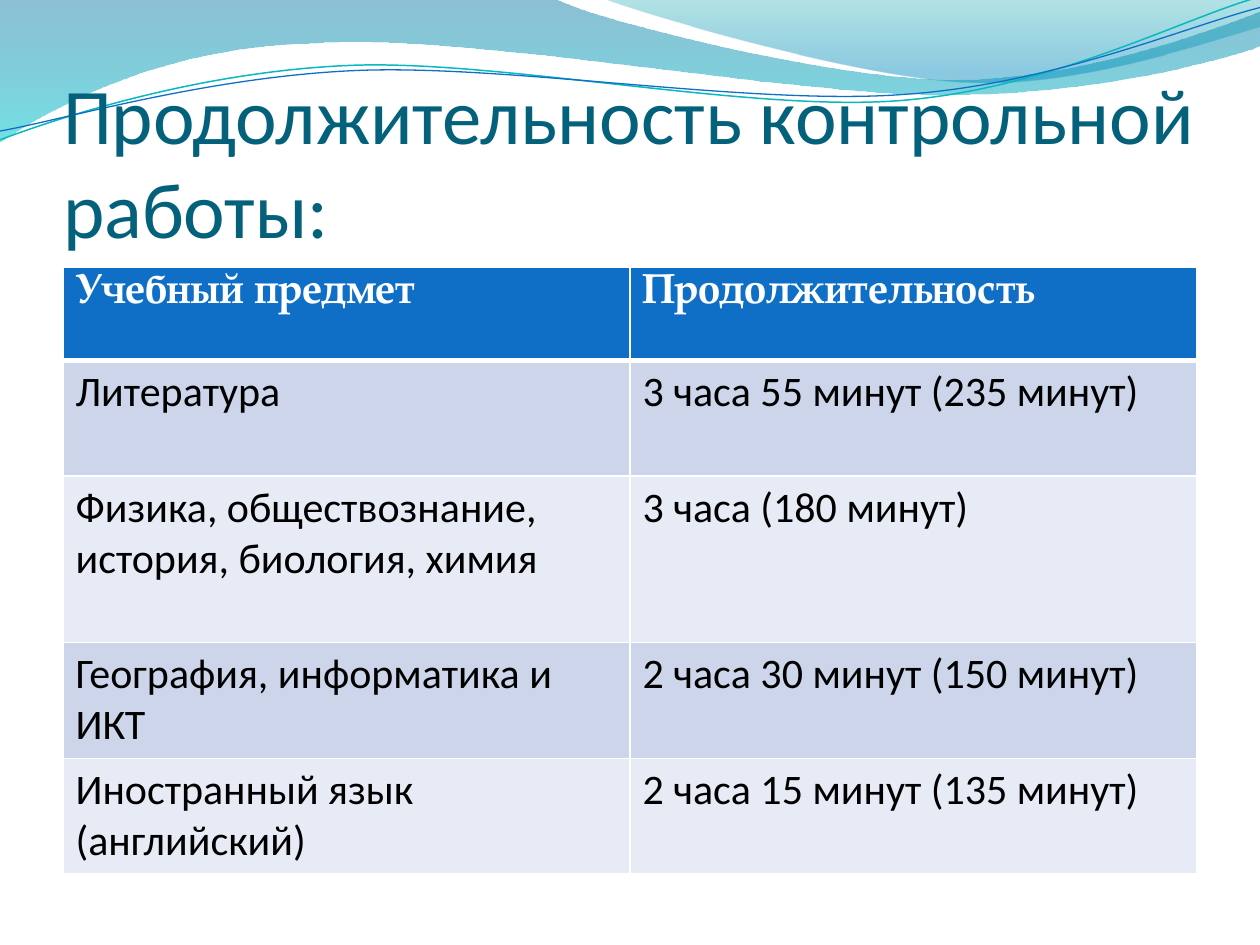
from lxml.etree import SubElement
from pptx import Presentation
from pptx.dml.color import RGBColor
from pptx.enum.text import MSO_ANCHOR, MSO_AUTO_SIZE, PP_ALIGN
from pptx.oxml.ns import qn
from pptx.util import Inches, Pt

COLORS = {
    "title": "04617B", "header": "0F6FC6", "band": "CCD5EA", "light": "E7EBF5",
    "white": "FFFFFF", "black": "000000", "teal": "0AB8BF",
    "deep": "0074A1", "aqua": "00C6CF", "sea": "00A1A9", "sky": "008BBF",
}
TITLE = "Продолжительность контрольной работы:"
ROWS = [
    ("Учебный предмет", "Продолжительность"),
    ("Литература", "3 часа 55 минут (235 минут)"),
    ("Физика, обществознание, история, биология, химия", "3 часа (180 минут)"),
    ("География, информатика и ИКТ", "2 часа 30 минут (150 минут)"),
    ("Иностранный язык (английский)", "2 часа 15 минут (135 минут)"),
]
ROW_HEIGHTS = [0.74, 0.92, 1.32, 0.92, 0.91]

# Each outline: a start point, then segments of one point (line) or three (curve).
WAVES = [
    {"start": (0, 0), "stops": [(0, "deep", 45), (1, "aqua", 55)], "segments": [
        [(4.4, -0.01)],
        [(4.76, 0.17), (6.64, 0.63), (7.58, 0.63)],
        [(8.53, 0.63), (9.58, 0.26), (10, 0.09)],
        [(10.01, 0.36)],
        [(9.83, 0.44), (8.7, 0.76), (7.46, 0.75)],
        [(6.22, 0.75), (3.82, 0.28), (2.57, 0.34)],
        [(1.29, 0.36), (0.46, 0.83), (-0.01, 1.13)],
    ]},
    {"start": (4.79, -0.01), "stops": [(0, "sea", 30), (0.8, "sky", 45)], "segments": [
        [(5.09, 0.11), (6.82, 0.62), (7.69, 0.65)],
        [(8.56, 0.69), (9.61, 0.32), (10, 0.21)],
        [(10, 0)],
    ]},
    {"start": (0, 1.11), "line": ("teal", 0.85), "segments": [
        [(0.48, 0.93), (1.58, 0.57), (2.77, 0.52)],
        [(3.95, 0.47), (5.93, 0.89), (7.13, 0.8)],
        [(8.33, 0.71), (9.38, 0.15), (9.98, -0.02)],
    ]},
    {"start": (0, 1.04), "line": ("header", 0.75), "segments": [
        [(0.47, 0.96), (1.64, 0.61), (2.83, 0.56)],
        [(4.03, 0.51), (5.97, 0.84), (7.17, 0.75)],
        [(8.36, 0.67), (9.41, 0.21), (10, 0.06)],
    ]},
]


def rgb(name):
    return RGBColor.from_string(COLORS[name])


def format_text(text_frame, font_name, size, color, bold=False):
    for paragraph in text_frame.paragraphs:
        for run in paragraph.runs:
            run.font.name, run.font.size, run.font.bold = font_name, Pt(size), bold
            run.font.color.rgb = rgb(color)


def add_wave(slide, wave):
    builder = slide.shapes.build_freeform(*map(Inches, wave["start"]))
    points = [tuple(map(Inches, point)) for segment in wave["segments"] for point in segment]
    builder.add_line_segments(points, close="stops" in wave)
    shape = builder.convert_to_shape()
    shape.shadow.inherit = False

    lines = iter(list(shape.element.iter(qn("a:lnTo"))))
    for segment in wave["segments"]:
        steps = [next(lines) for _ in segment]
        if len(steps) == 3:
            curve = steps[0]
            curve.tag = qn("a:cubicBezTo")
            for step in steps[1:]:
                curve.append(step[0])
                step.getparent().remove(step)

    if "line" in wave:
        color, width = wave["line"]
        shape.fill.background()
        shape.line.color.rgb = rgb(color)
        shape.line.width = Pt(width)
        return
    shape.line.fill.background()
    shape.fill.gradient()
    shape.fill.gradient_angle = 270
    for stop, (position, color, opacity) in zip(shape.fill.gradient_stops, wave["stops"]):
        stop.position = position
        stop.color.rgb = rgb(color)
    color_elements = shape.element.spPr.iter(qn("a:srgbClr"))
    for element, (_, _, opacity) in zip(color_elements, wave["stops"]):
        SubElement(element, qn("a:alpha"), val=str(opacity * 1000))


def add_title(slide):
    title = slide.shapes.title
    title.left, title.top, title.width, title.height = map(Inches, (0.5, 0.77, 9, 1.25))
    frame = title.text_frame
    frame.text = TITLE
    frame.word_wrap = True
    frame.auto_size = MSO_AUTO_SIZE.NONE
    frame.vertical_anchor = MSO_ANCHOR.BOTTOM
    frame.margin_left = frame.margin_right = frame.margin_bottom = 0
    frame.margin_top = Inches(0.05)
    frame.paragraphs[0].alignment = PP_ALIGN.LEFT
    format_text(frame, "Calibri", 45, "title")
    title.element.getparent().append(title.element)


def set_borders(cell, bottom_width, top_width):
    properties = cell._tc.get_or_add_tcPr()
    widths = {"lnL": 1, "lnR": 1, "lnT": top_width, "lnB": bottom_width}
    for index, (side, width) in enumerate(widths.items()):
        line = SubElement(properties, qn("a:" + side), w=str(Pt(width)))
        fill = SubElement(line, qn("a:solidFill"))
        SubElement(fill, qn("a:srgbClr"), val=COLORS["white"])
        properties.insert(index, line)


def add_schedule(slide):
    frame = slide.shapes.add_table(len(ROWS), 2, Inches(0.5), Inches(2.12),
                                   Inches(9), Inches(sum(ROW_HEIGHTS)))
    table = frame.table
    for row_index, (texts, height) in enumerate(zip(ROWS, ROW_HEIGHTS)):
        table.rows[row_index].height = Inches(height)
        header = row_index == 0
        fill = "header" if header else ("light", "band")[row_index % 2]
        for column_index, text in enumerate(texts):
            cell = table.cell(row_index, column_index)
            cell.text = text
            cell.fill.solid()
            cell.fill.fore_color.rgb = rgb(fill)
            set_borders(cell, 3 if header else 1, 3 if row_index == 1 else 1)
            if header:
                format_text(cell.text_frame, "TeX Gyre Pagella", 24, "white", True)
            else:
                format_text(cell.text_frame, "Calibri", 24, "black")


def main():
    """Build the slide with the durations of the tests."""
    presentation = Presentation()
    presentation.slide_width, presentation.slide_height = Inches(10), Inches(7.5)
    slide = presentation.slides.add_slide(presentation.slide_layouts[5])
    for wave in WAVES:
        add_wave(slide, wave)
    add_title(slide)
    add_schedule(slide)
    presentation.save("out.pptx")


if __name__ == "__main__":
    main()
